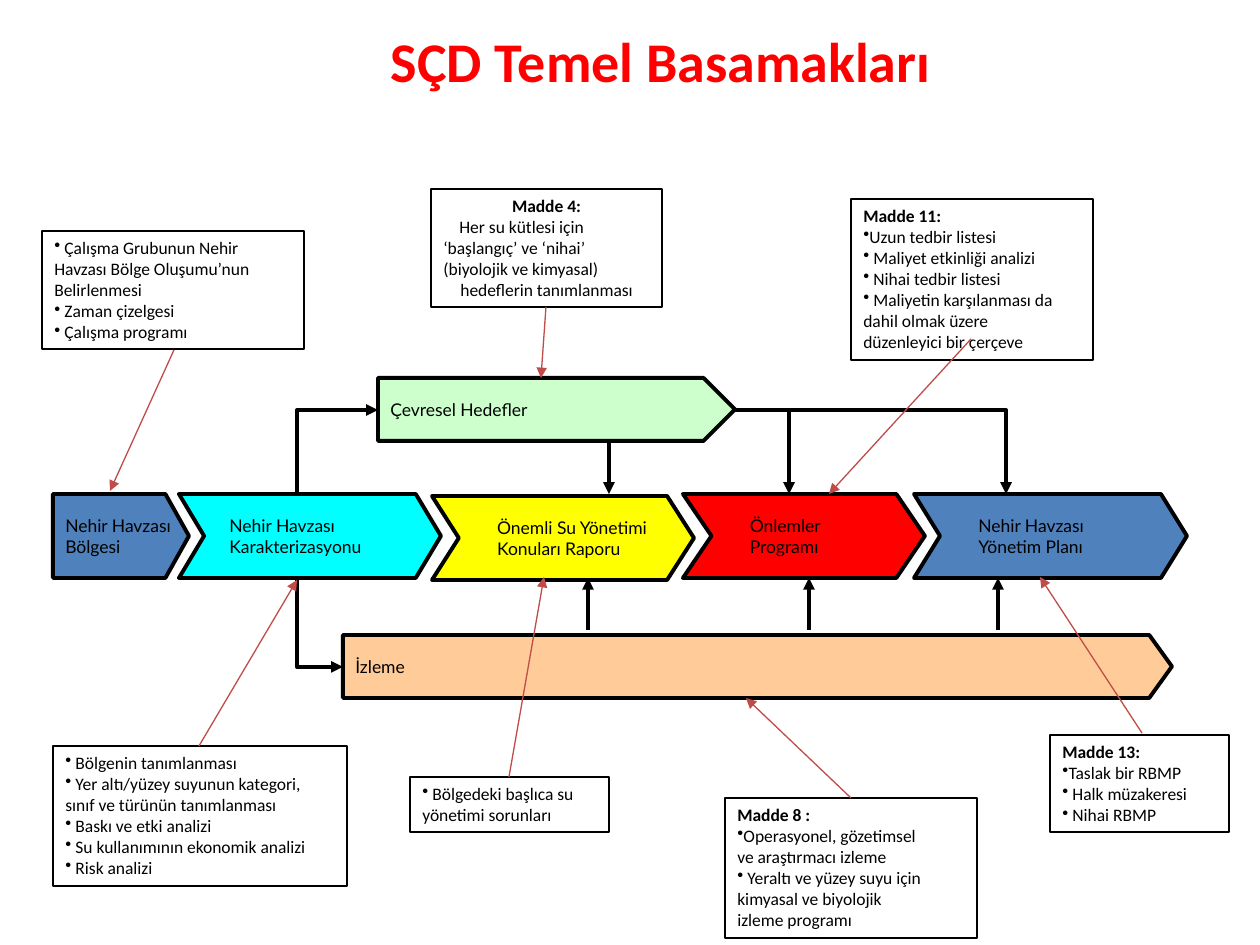
from copy import deepcopy
from lxml.etree import SubElement
from pptx import Presentation
from pptx.dml.color import RGBColor
from pptx.enum.shapes import MSO_CONNECTOR, MSO_SHAPE
from pptx.enum.text import MSO_ANCHOR, MSO_AUTO_SIZE, PP_ALIGN
from pptx.oxml.ns import qn
from pptx.util import Pt

PX = 914400 / 126
COLORS = {"black": "000000", "white": "FFFFFF", "red": "FF0000", "blue": "4F81BD",
          "cyan": "00FFFF", "yellow": "FFFF00", "green": "CCFFCC", "orange": "FFCC99",
          "callout": "BF4C48"}

TITLE = "SÇD Temel Basamakları"

# Process steps: box, shape, point depth, fill, indent, lines
STEPS = [
    ((179, 494, 262, 84), "CHEVRON", 0.3, "cyan", 13, ["Nehir Havzası", "Karakterizasyonu"]),
    ((53, 494, 136, 84), "PENTAGON", 0.28, "blue", 0, ["Nehir Havzası", "Bölgesi"]),
    ((432, 496, 262, 84), "CHEVRON", 0.32, "yellow", 26,
     ["Önemli Su Yönetimi", "Konuları Raporu"]),
    ((683, 494, 242, 84), "CHEVRON", 0.34, "red", 26, ["Önlemler", "Programı"]),
    ((914, 494, 273, 84), "CHEVRON", 0.31, "blue", 26, ["Nehir Havzası", "Yönetim Planı"]),
    ((378, 378, 357, 63), "PENTAGON", 0.5, "green", 0, ["Çevresel Hedefler"]),
    ((343, 635, 829, 63), "PENTAGON", 0.36, "orange", 0, ["İzleme"]),
]

# Notes: box and paragraphs as (style, text); \v is a line break
NOTES = [
    ((42, 231, 262, 118), [
        ("bullet", " Çalışma Grubunun Nehir\vHavzası Bölge Oluşumu’nun\vBelirlenmesi"),
        ("bullet", " Zaman çizelgesi"),
        ("bullet", " Çalışma programı")]),
    ((53, 746, 294, 140), [
        ("bullet", " Bölgenin tanımlanması"),
        ("bullet", " Yer altı/yüzey suyunun kategori,\vsınıf ve türünün tanımlanması"),
        ("bullet", " Baskı ve etki analizi"),
        ("bullet", " Su kullanımının ekonomik analizi"),
        ("bullet", " Risk analizi")]),
    ((431, 189, 231, 118), [
        ("centred heading", "Madde 4:"),
        ("indented", "Her su kütlesi için\v‘başlangıç’ ve ‘nihai’\v(biyolojik ve kimyasal)"),
        ("centred", "hedeflerin tanımlanması")]),
    ((410, 777, 199, 55), [
        ("bullet", " Bölgedeki başlıca su\vyönetimi sorunları")]),
    ((725, 798, 252, 140), [
        ("heading", "Madde 8 :"),
        ("bullet", "Operasyonel, gözetimsel\vve araştırmacı izleme"),
        ("bullet", " Yeraltı ve yüzey suyu için\vkimyasal ve biyolojik\vizleme programı")]),
    ((851, 199, 242, 161), [
        ("heading", "Madde 11:"),
        ("bullet", "Uzun tedbir listesi"),
        ("bullet", " Maliyet etkinliği analizi"),
        ("bullet", " Nihai tedbir listesi"),
        ("bullet", " Maliyetin karşılanması da\vdahil olmak üzere\vdüzenleyici bir çerçeve")]),
    ((1050, 735, 179, 97), [
        ("heading", "Madde 13:"),
        ("bullet", "Taslak bir RBMP"),
        ("bullet", " Halk müzakeresi"),
        ("bullet", " Nihai RBMP")]),
]

# Elbows run sideways first, then vertically; the arrowhead sits on the named end
ELBOWS = [
    ((378, 410, 297, 494), "headEnd"),
    ((343, 667, 297, 578), "headEnd"),
    ((735, 410, 789, 494), "tailEnd"),
    ((735, 410, 1006, 494), "tailEnd"),
]
FLOW_ARROWS = [(x, 630, x, 578) for x in (588, 809, 998)] + [(609, 441, 609, 494)]
CALLOUT_ARROWS = [
    (174, 350, 110, 491), (199, 746, 297, 580), (546, 307, 541, 378),
    (509, 777, 544, 577), (851, 798, 746, 698), (971, 339, 829, 494),
    (1142, 733, 1040, 577),
]


def emu(lengths):
    return [round(length * PX) for length in lengths]


def rgb(name):
    return RGBColor.from_string(COLORS[name])


def write(para, text, color="black", **font):
    para.text = text
    for span in para.runs:
        for key, value in font.items():
            setattr(span.font, key, value)
        span.font.color.rgb = rgb(color)
    # Line breaks take the size of the text around them
    for line_break in para._p.findall(qn("a:br")):
        line_break.append(deepcopy(para.runs[0]._r.rPr))


def add_box(page, kind, box, fill, line_width):
    shape = page.shapes.add_shape(kind, *emu(box))
    shape.shadow.inherit = False
    shape.fill.solid()
    shape.fill.fore_color.rgb = rgb(fill)
    shape.line.color.rgb = rgb("black")
    shape.line.width = Pt(line_width)
    return shape


def next_para(frame, index):
    para = frame.paragraphs[0] if index == 0 else frame.add_paragraph()
    para.alignment = PP_ALIGN.LEFT
    return para


def add_arrow(page, ends, color, width, head="tailEnd", elbow=False):
    arrow = page.shapes.add_connector(MSO_CONNECTOR.STRAIGHT, *emu(ends))
    if elbow:
        arrow._element.spPr.find(qn("a:prstGeom")).set("prst", "bentConnector2")
    arrow.line.color.rgb = rgb(color)
    arrow.line.width = Pt(width)
    SubElement(arrow.get_or_add_ln(), qn(f"a:{head}"), type="triangle")
    SubElement(arrow._element.spPr, qn("a:effectLst"))


def add_step(page, box, kind, depth, fill, indent, lines):
    shape = add_box(page, getattr(MSO_SHAPE, kind), box, fill, 2.25)
    shape.adjustments[0] = depth
    frame = shape.text_frame
    frame.word_wrap = False
    frame.vertical_anchor = MSO_ANCHOR.MIDDLE
    for index, line in enumerate(lines):
        para = next_para(frame, index)
        para._p.get_or_add_pPr().set("marL", str(round(indent * PX)))
        write(para, line, size=Pt(10), name="Lato")


def add_note(page, box, paragraphs):
    frame = add_box(page, MSO_SHAPE.RECTANGLE, box, "white", 0.75).text_frame
    frame.word_wrap = True
    frame.auto_size = MSO_AUTO_SIZE.SHAPE_TO_FIT_TEXT
    frame.vertical_anchor = MSO_ANCHOR.TOP
    for index, (style, text) in enumerate(paragraphs):
        para = next_para(frame, index)
        properties = para._p.get_or_add_pPr()
        if "centred" in style:
            para.alignment = PP_ALIGN.CENTER
        if style == "indented":
            properties.set("indent", str(round(16 * PX)))
        if style == "bullet":
            SubElement(properties, qn("a:buChar"), char="•")
        write(para, text, size=Pt(10), name="Calibri", bold="heading" in style)


def main():
    deck = Presentation()
    deck.slide_width, deck.slide_height = emu((1260, 945))
    page = deck.slides.add_slide(deck.slide_layouts[6])

    # Process chain and its links
    for step in STEPS:
        add_step(page, *step)
    for ends, head in ELBOWS:
        add_arrow(page, ends, "black", 2.25, head, elbow=True)
    for ends in FLOW_ARROWS:
        add_arrow(page, ends, "black", 2.25)

    # Notes and their pointers
    for note in NOTES:
        add_note(page, *note)
    for ends in CALLOUT_ARROWS:
        add_arrow(page, ends, "callout", 0.75)

    # Title
    frame = page.shapes.add_textbox(*emu((178, 20, 966, 81))).text_frame
    frame.word_wrap = True
    para = next_para(frame, 0)
    para.alignment = PP_ALIGN.CENTER
    write(para, TITLE, "red", size=Pt(32), name="Calibri", bold=True)

    deck.save("out.pptx")


if __name__ == "__main__":
    main()
